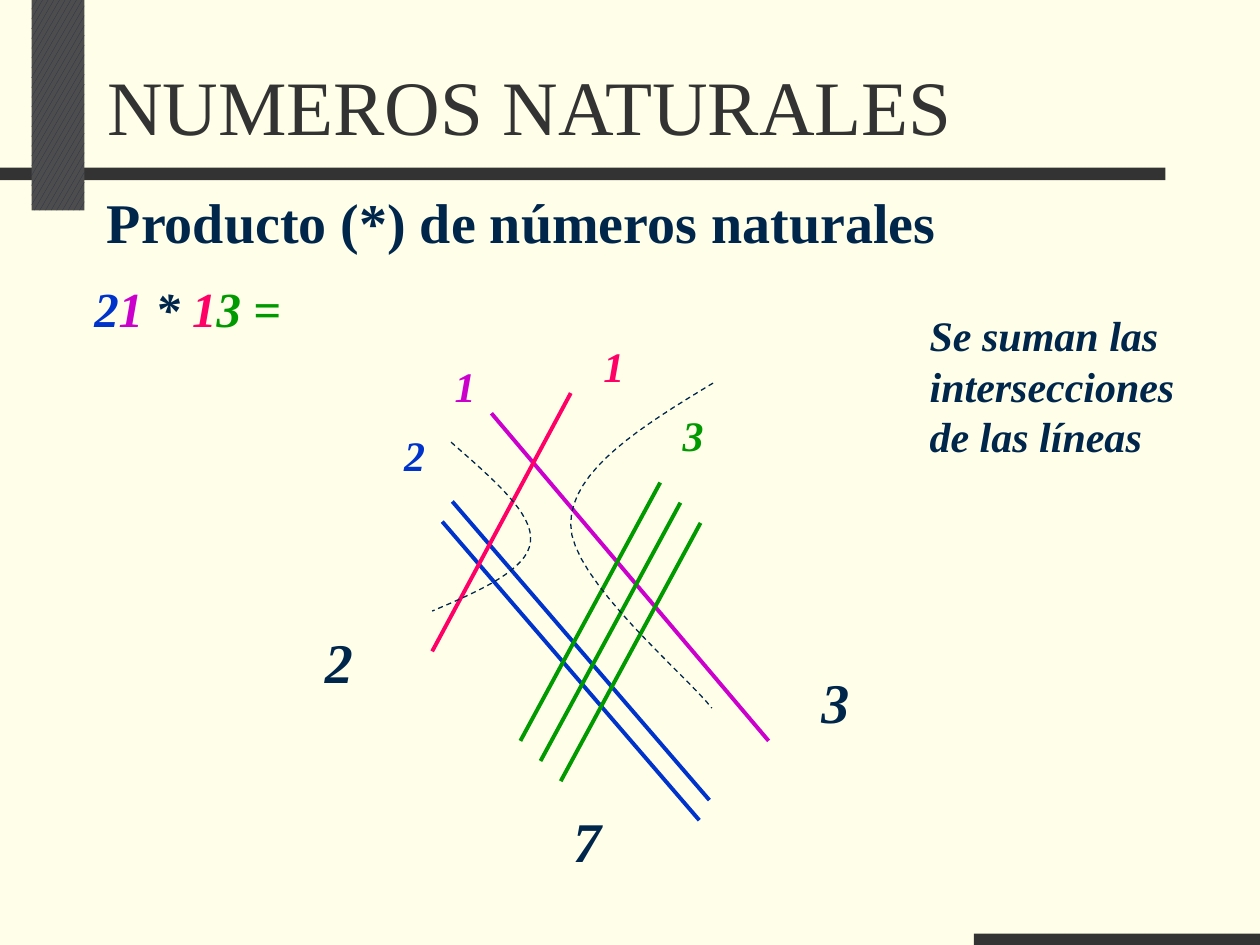
import pptx
import pptx.dml.color
import pptx.enum.dml
import pptx.enum.shapes
import pptx.enum.text
import pptx.util
from lxml import etree
from pptx.oxml.ns import qn

FONT = "Times New Roman"
NAVY, GREY = "00264C", "333333"
BLUE, PURPLE, PINK, GREEN = "0033CC", "CC00CC", "FF0066", "009900"

presentation = pptx.Presentation()
presentation.slide_width = pptx.util.Inches(10)
presentation.slide_height = pptx.util.Inches(7.5)
COLUMN = presentation.slide_width / 10
ROW = presentation.slide_height / 7.5


def grid(*lengths):
    """Turn alternating columns and rows into slide units."""
    return [round(length * (ROW if i % 2 else COLUMN)) for i, length in enumerate(lengths)]


def paint(target, colour):
    target.rgb = pptx.dml.color.RGBColor.from_string(colour)


def style(font, size, colour, bold=True, italic=True):
    font.name, font.size = FONT, pptx.util.Pt(size)
    font.bold, font.italic = bold, italic
    paint(font.color, colour)


def add_text(slide, box, pieces, size, italic=True, wrap=True):
    """Write (text, colour) pieces as one paragraph in the box."""
    frame = slide.shapes.add_textbox(*grid(*box)).text_frame
    frame.word_wrap = wrap
    frame.auto_size = pptx.enum.text.MSO_AUTO_SIZE.SHAPE_TO_FIT_TEXT
    paragraph = frame.paragraphs[0]
    style(paragraph.font, size, pieces[0][1], italic=italic)
    for text, colour in pieces:
        run = paragraph.add_run()
        run.text = text
        paint(run.font.color, colour)


def add_bar(slide, box):
    bar = slide.shapes.add_shape(pptx.enum.shapes.MSO_SHAPE.RECTANGLE, *grid(*box))
    bar.shadow.inherit = False
    bar.line.fill.background()
    bar.fill.solid()
    paint(bar.fill.fore_color, GREY)
    return bar


def add_frame(slide):
    add_bar(slide, (0, 1.33, 9.25, 0.1))
    column = add_bar(slide, (0.25, 0, 0.42, 1.67))
    column.fill.patterned()
    column.fill.pattern = pptx.enum.dml.MSO_PATTERN.LARGE_CONFETTI
    paint(column.fill.fore_color, "262D4C")
    paint(column.fill.back_color, "4D4D4D")
    add_bar(slide, (7.73, 7.41, 2.27, 0.09))


def add_title(slide, box, text):
    title = slide.shapes.title
    title.left, title.top, title.width, title.height = grid(*box)
    title.text_frame.text = text
    title.text_frame.vertical_anchor = pptx.enum.text.MSO_ANCHOR.BOTTOM
    paragraph = title.text_frame.paragraphs[0]
    paragraph.alignment = pptx.enum.text.PP_ALIGN.LEFT
    style(paragraph.font, 44, GREY, bold=False, italic=False)


def add_strokes(slide, start, end, colour, count=1, step=(0, 0)):
    """Draw parallel lines, each moved by step from the one before."""
    for i in range(count):
        dx, dy = i * step[0], i * step[1]
        stroke = slide.shapes.add_connector(
            pptx.enum.shapes.MSO_CONNECTOR.STRAIGHT,
            *grid(start[0] + dx, start[1] + dy, end[0] + dx, end[1] + dy))
        stroke.line.width = pptx.util.Pt(2.25)
        paint(stroke.line.color, colour)
        etree.SubElement(stroke._element.spPr, qn("a:effectLst"))


def bezier(p0, p1, p2, p3, steps=16):
    for t in (i / steps for i in range(1, steps + 1)):
        s = 1 - t
        yield grid(*(s**3 * a + 3 * s * s * t * b + 3 * s * t * t * c + t**3 * d
                     for a, b, c, d in zip(p0, p1, p2, p3)))


def add_divider(slide, points):
    """Draw a dashed curve through two joined cubic segments."""
    builder = slide.shapes.build_freeform(*grid(*points[0]))
    vertices = [*bezier(*points[:4]), *bezier(*points[3:])]
    builder.add_line_segments(vertices, close=False)
    divider = builder.convert_to_shape()
    divider.shadow.inherit = False
    divider.fill.background()
    divider.line.width = pptx.util.Pt(0.75)
    divider.line.dash_style = pptx.enum.dml.MSO_LINE.DASH
    paint(divider.line.color, NAVY)


def add_multiplication(slide, left, top):
    """Cross the lines of 21 and 13 and count each group of crossings."""
    def place(x, y):
        return left + x, top + y

    strokes = [
        ((1.01, 1.64), (3.05, 4.01), BLUE, 2, (0.08, -0.16)),
        ((1.4, 0.78), (3.6, 3.38), PURPLE, 1, (0, 0)),
        ((0.93, 2.67), (2.03, 0.62), PINK, 1, (0, 0)),
        ((1.63, 3.38), (2.74, 1.33), GREEN, 3, (0.16, 0.16)),
    ]
    for start, end, colour, count, step in strokes:
        add_strokes(slide, place(*start), place(*end), colour, count, step)

    digits = [("2", 0.61, 0.86, BLUE), ("1", 1.01, 0.31, PURPLE),
              ("1", 2.19, 0.15, PINK), ("3", 2.82, 0.7, GREEN)]
    for digit, x, y, colour in digits:
        add_text(slide, (*place(x, y), 0.37, 0.5), [(digit, colour)], 24, wrap=False)

    dividers = [
        [(3.16, 0.54), (2.6, 0.88), (2.03, 1.23), (2.03, 1.66),
         (2.02, 2.09), (2.96, 2.87), (3.15, 3.12)],
        [(1.08, 1.01), (1.41, 1.3), (1.74, 1.58), (1.71, 1.8),
         (1.69, 2.02), (1.31, 2.19), (0.93, 2.35)],
    ]
    for points in dividers:
        add_divider(slide, [place(*point) for point in points])

    for total, x, y in [("3", 3.92, 2.75), ("7", 1.95, 3.85), ("2", -0.02, 2.43)]:
        add_text(slide, (*place(x, y), 0.63, 0.63), [(total, NAVY)], 32)


def main():
    slide = presentation.slides.add_slide(presentation.slide_layouts[5])
    slide.background.fill.solid()
    paint(slide.background.fill.fore_color, "FFFFE9")
    add_frame(slide)
    add_title(slide, (0.75, 0.31, 8.95, 0.94), "NUMEROS NATURALES")
    add_text(slide, (0.75, 1.44, 6.79, 0.63),
             [("Producto (*) de números naturales", NAVY)], 32, italic=False, wrap=False)
    add_text(slide, (0.65, 2.16, 3.17, 0.57),
             [("2", BLUE), ("1", PURPLE), (" * ", NAVY), ("1", PINK), ("3 =", GREEN)], 28)
    add_multiplication(slide, 2.5, 2.5)
    add_text(slide, (7.28, 2.41, 2.44, 1.3),
             [("Se suman las intersecciones de las líneas", NAVY)], 24)
    presentation.save("out.pptx")


if __name__ == "__main__":
    main()
